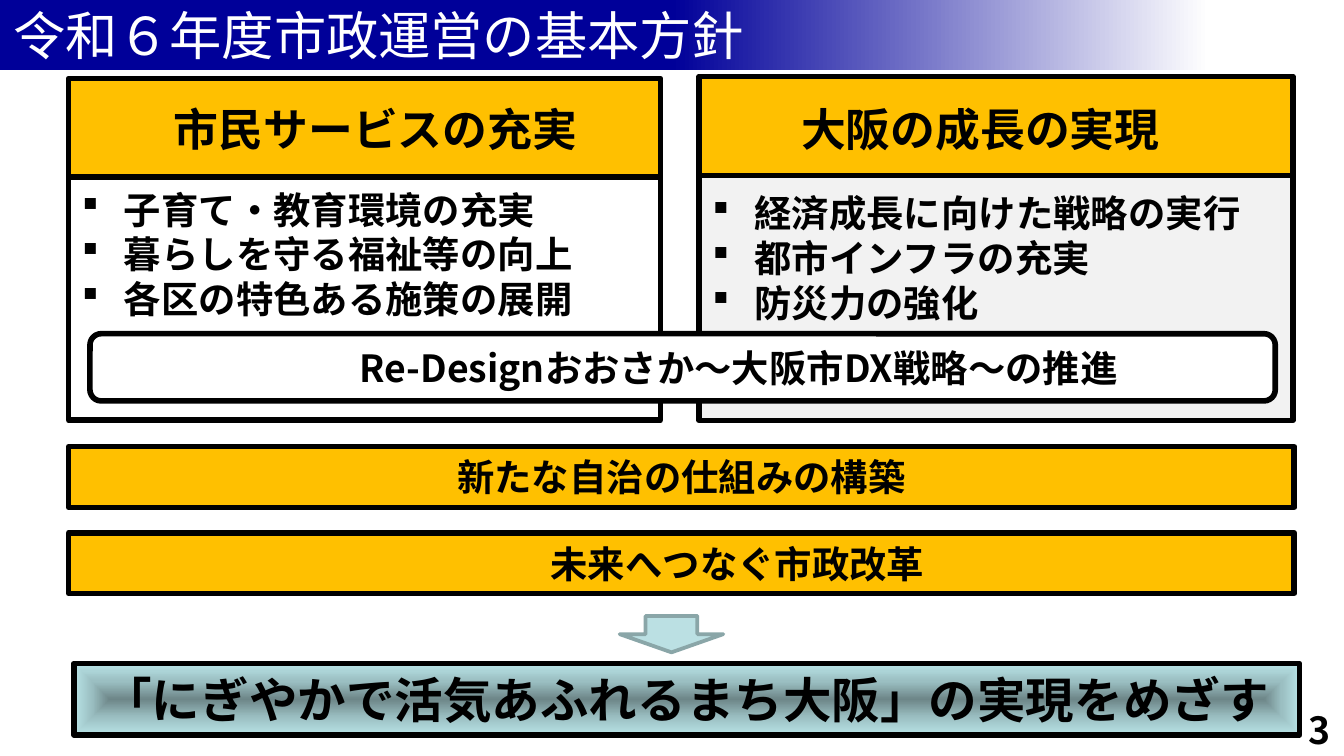
from lxml import etree
from pptx import Presentation
from pptx.dml.color import RGBColor
from pptx.enum.shapes import MSO_SHAPE
from pptx.enum.text import MSO_ANCHOR, PP_ALIGN
from pptx.oxml.ns import qn
from pptx.util import Pt

RECTANGLE = MSO_SHAPE.RECTANGLE
ROUNDED = MSO_SHAPE.ROUNDED_RECTANGLE
DOWN_ARROW = MSO_SHAPE.DOWN_ARROW
LEFT, CENTER, RIGHT = PP_ALIGN.LEFT, PP_ALIGN.CENTER, PP_ALIGN.RIGHT
TOP, MIDDLE = MSO_ANCHOR.TOP, MSO_ANCHOR.MIDDLE
FONT = "Noto Sans CJK JP"
COLORS = {
    "navy": "000099", "white": "FFFFFF", "black": "000000", "amber": "FFC000",
    "gray": "F2F2F2", "aqua": "BBE0E3", "aqua_edge": "8AA6A8",
    "goal_core": "6D8688", "goal_middle": "9BBFC2", "goal_rim": "B8E3E6",
}


class PolicySlide:
    """Holds the style and the slide that the elements are drawn on."""

    def __init__(self, slide):
        self.slide = slide

    def color(self, name):
        return RGBColor.from_string(COLORS[name])

    def box(self, bounds, fill=None, line="black", width=3, kind=RECTANGLE):
        shape = self.slide.shapes.add_shape(kind, *map(Pt, bounds))
        shape.shadow.inherit = False
        if fill:
            shape.fill.solid()
            shape.fill.fore_color.rgb = self.color(fill)
        if line:
            shape.line.color.rgb = self.color(line)
            shape.line.width = Pt(width)
        else:
            shape.line.fill.background()
        return shape

    def gradient(self, shape, stops, from_center=False):
        shape.fill.gradient()
        gradient = shape._element.spPr.find(qn("a:gradFill"))
        for child in list(gradient):
            gradient.remove(child)
        stop_list = etree.SubElement(gradient, qn("a:gsLst"))
        for position, name in stops:
            stop = etree.SubElement(stop_list, qn("a:gs"), pos=str(position * 1000))
            etree.SubElement(stop, qn("a:srgbClr"), val=COLORS[name])
        if from_center:
            center = etree.SubElement(gradient, qn("a:path"), path="shape")
            sides = dict.fromkeys("ltrb", "50000")
            etree.SubElement(center, qn("a:fillToRect"), **sides)
        else:
            etree.SubElement(gradient, qn("a:lin"), ang="0", scaled="0")

    def text_box(self, bounds, lines, size, **style):
        shape = self.slide.shapes.add_textbox(*map(Pt, bounds))
        self.set_text(shape, lines, size, **style)

    def set_text(self, shape, lines, size, align=CENTER, anchor=MIDDLE, color="black",
                 bold=True, wrap=True, indent=0, bullets=False):
        frame = shape.text_frame
        frame.word_wrap = wrap
        frame.vertical_anchor = anchor
        frame.margin_top = frame.margin_bottom = Pt(3.6)
        frame.text = "\n".join(lines)
        for paragraph in frame.paragraphs:
            paragraph.alignment = align
            properties = paragraph._p.get_or_add_pPr()
            if indent:
                properties.set("marL", str(Pt(indent)))
            if bullets:
                paragraph.line_spacing = Pt(size * 1.2)
                properties.set("indent", str(-Pt(indent)))
                etree.SubElement(properties, qn("a:buFont"), typeface="Wingdings")
                etree.SubElement(properties, qn("a:buChar"), char="§")
            font = paragraph.font
            font.name, font.size, font.bold = FONT, Pt(size), bold
            font.color.rgb = self.color(color)
            default = properties.find(qn("a:defRPr"))
            etree.SubElement(default, qn("a:ea"), typeface=FONT)

    def bar(self, bounds, text, size=20, fill="amber", kind=RECTANGLE, indent=0):
        shape = self.box(bounds, fill, kind=kind)
        self.set_text(shape, [text], size, indent=indent)
        return shape


def main():
    presentation = Presentation()
    presentation.slide_width, presentation.slide_height = Pt(720), Pt(405)
    page = PolicySlide(presentation.slides.add_slide(presentation.slide_layouts[6]))

    page.box((332, 330, 55.5, 19.5), "aqua", "aqua_edge", 2, DOWN_ARROW)
    title = page.box((0, 0, 720, 37.5), line=None)
    page.gradient(title, [(50, "navy"), (90, "white")])
    page.set_text(title, ["令和６年度市政運営の基本方針"], 28, LEFT,
                  color="white", bold=False, wrap=False)

    page.bar((36.8, 239.3, 656.6, 32.5), "新たな自治の仕組みの構築")
    page.bar((36.8, 285.4, 656.6, 32.5), "未来へつなぐ市政改革", indent=60)
    goal = page.bar((39.6, 355.5, 656.6, 38.3),
                    "「にぎやかで活気あふれるまち大阪」の実現をめざす", 26, None)
    page.gradient(goal, [(0, "goal_core"), (50, "goal_middle"), (100, "goal_rim")], True)
    page.text_box((550, 376.6, 170, 28), ["3"], 20, align=RIGHT)

    columns = [
        (36.8, 43, 317, "white", 42, 48.2, 96.5, "市民サービスの充実",
         ["子育て・教育環境の充実", "暮らしを守る福祉等の向上", "各区の特色ある施策の展開"]),
        (374.6, 41.6, 318, "gray", 41, 372.2, 98.6, "大阪の成長の実現",
         ["経済成長に向けた戦略の実行", "都市インフラの充実", "防災力の強化"]),
    ]
    for left, top, width, fill, head_top, head_left, list_top, heading, items in columns:
        page.box((left, top, width, 225.2 - top), fill)
        page.box((left, head_top, width, 53), "amber")
        page.text_box((head_left, 51.1, 306, 36), [heading], 24)
        page.text_box((left, list_top, 319, 80), items, 20, align=LEFT, anchor=TOP,
                      indent=22.5, bullets=True)
    page.bar((48.2, 178.8, 635, 36), "Re-Designおおさか～大阪市DX戦略～の推進",
             fill="white", kind=ROUNDED, indent=60)

    presentation.save("out.pptx")


if __name__ == "__main__":
    main()
